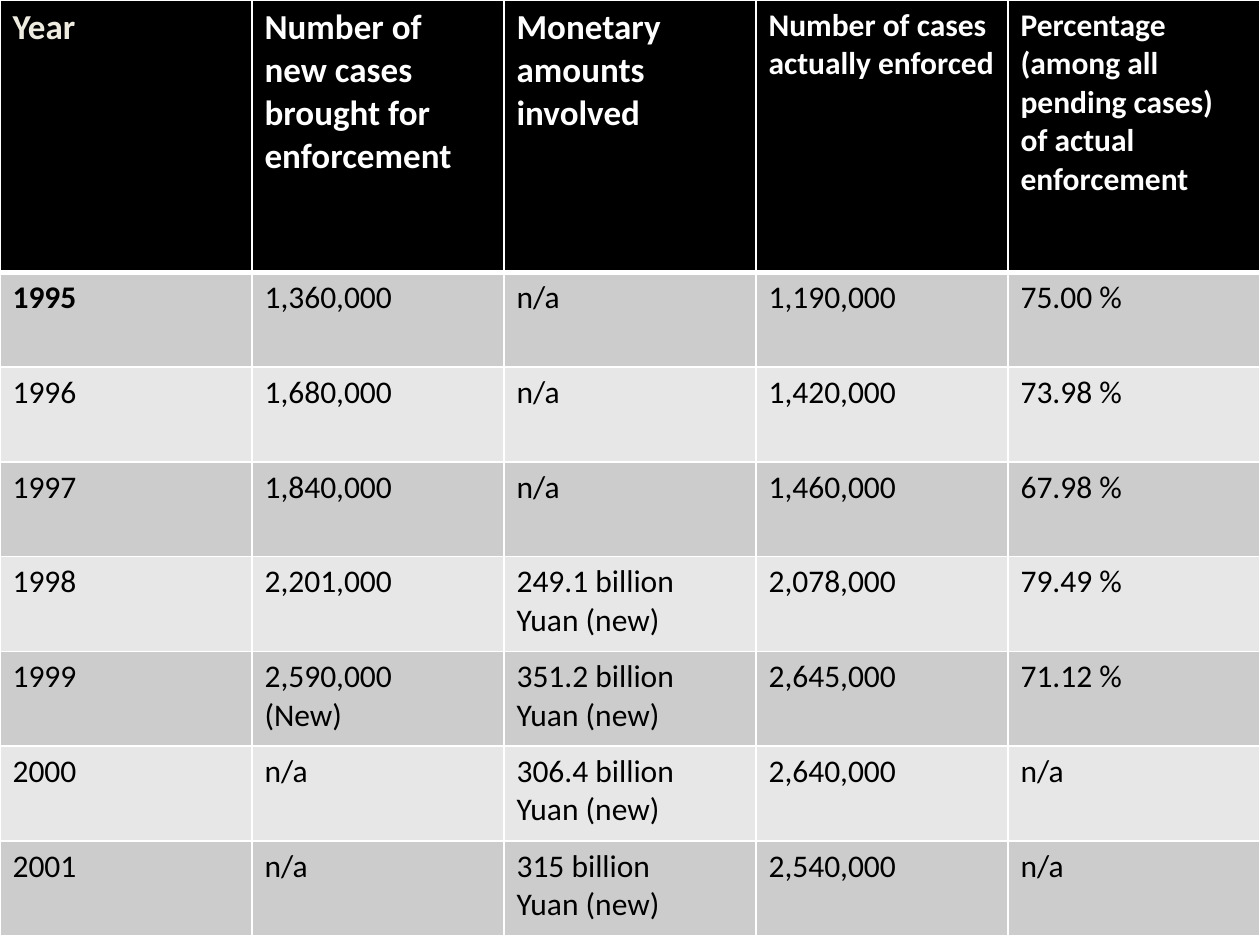
from lxml.etree import SubElement
from pptx import Presentation
from pptx.dml.color import RGBColor
from pptx.oxml.ns import qn
from pptx.util import Cm, Pt

SLIDE_WIDTH, SLIDE_HEIGHT = 25.4, 19.05
HEADER_HEIGHT, YEAR_HEIGHT = 5.49, 1.91

HEADINGS = [
    "Year",
    "Number of new cases brought for enforcement",
    "Monetary amounts involved",
    "Number of cases actually enforced",
    "Percentage (among all pending cases)\nof actual\nenforcement",
]
HEADING_SIZES = [20, 20, 20, 18, 18]
YEARS = [
    ["1995", "1,360,000", "n/a", "1,190,000", "75.00 %"],
    ["1996", "1,680,000", "n/a", "1,420,000", "73.98 %"],
    ["1997", "1,840,000", "n/a", "1,460,000", "67.98 %"],
    ["1998", "2,201,000", "249.1 billion\nYuan (new)", "2,078,000", "79.49 %"],
    ["1999", "2,590,000\n(New)", "351.2 billion\nYuan (new)", "2,645,000", "71.12 %"],
    ["2000", "n/a", "306.4 billion\nYuan (new)", "2,640,000", "n/a"],
    ["2001", "n/a", "315 billion\nYuan (new)", "2,540,000", "n/a"],
]


def color(hex_string):
    return RGBColor.from_string(hex_string)


class EnforcementSlide:
    font = "Calibri"
    white, ivory, black = "FFFFFF", "EEECE1", "000000"
    bands = ["CCCCCC", "E7E7E7"]
    thin, thick = 1, 3

    def __init__(self, slide):
        self.slide = slide

    def borders(self, cell, top, bottom):
        properties = cell._tc.get_or_add_tcPr()
        widths = {"a:lnL": self.thin, "a:lnR": self.thin, "a:lnT": top, "a:lnB": bottom}
        for side, width in widths.items():
            line = SubElement(properties, qn(side), w=str(Pt(width)))
            fill = SubElement(line, qn("a:solidFill"))
            SubElement(fill, qn("a:srgbClr"), val=self.white)

    def cell(self, cell, text, size, ink, fill, bold=False, top=thin, bottom=thin):
        self.borders(cell, top, bottom)
        cell.fill.solid()
        cell.fill.fore_color.rgb = color(fill)
        cell.text_frame.text = text
        for paragraph in cell.text_frame.paragraphs:
            for run in paragraph.runs:
                run.font.name = self.font
                run.font.size = Pt(size)
                run.font.bold = bold
                run.font.color.rgb = color(ink)

    def table(self, headings, heading_sizes, years):
        height = HEADER_HEIGHT + YEAR_HEIGHT * len(years)
        table = self.slide.shapes.add_table(
            len(years) + 1, len(headings), 0, 0, Cm(SLIDE_WIDTH), Cm(height)
        ).table
        for column in table.columns:
            column.width = Cm(SLIDE_WIDTH / len(headings))
        for index, row in enumerate(table.rows):
            row.height = Cm(YEAR_HEIGHT if index else HEADER_HEIGHT)

        for column, (heading, size) in enumerate(zip(headings, heading_sizes)):
            ink = self.white if column else self.ivory
            self.cell(table.cell(0, column), heading, size, ink, self.black,
                      bold=True, bottom=self.thick)
        for row, figures in enumerate(years, start=1):
            band = self.bands[(row - 1) % 2]
            top = self.thick if row == 1 else self.thin
            for column, figure in enumerate(figures):
                self.cell(table.cell(row, column), figure, 18, self.black, band,
                          bold=(row == 1 and column == 0), top=top)


def main():
    presentation = Presentation()
    presentation.slide_width = Cm(SLIDE_WIDTH)
    presentation.slide_height = Cm(SLIDE_HEIGHT)
    blank_layout = presentation.slide_layouts[6]
    enforcement = EnforcementSlide(presentation.slides.add_slide(blank_layout))
    enforcement.table(HEADINGS, HEADING_SIZES, YEARS)
    presentation.save("out.pptx")


if __name__ == "__main__":
    main()
